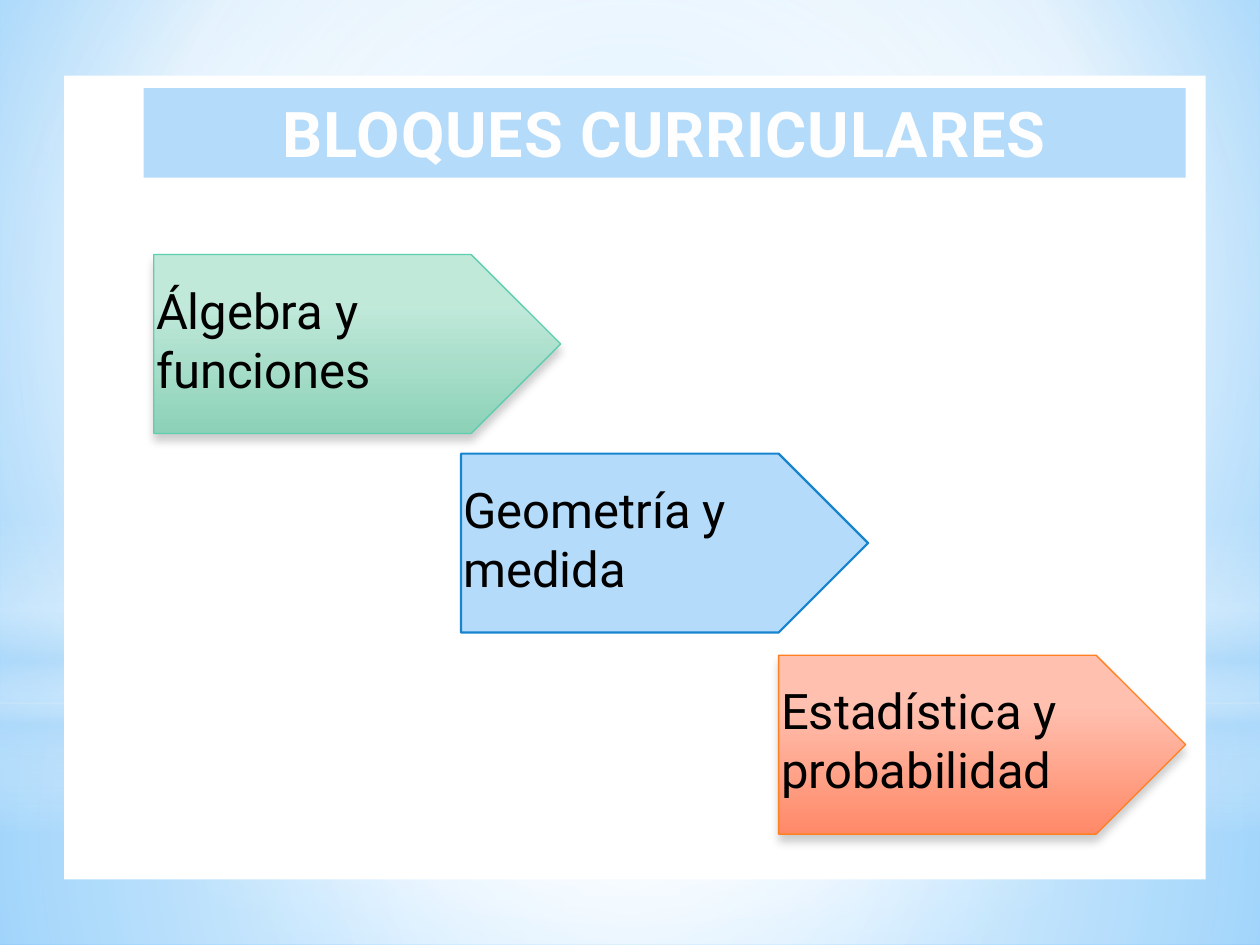
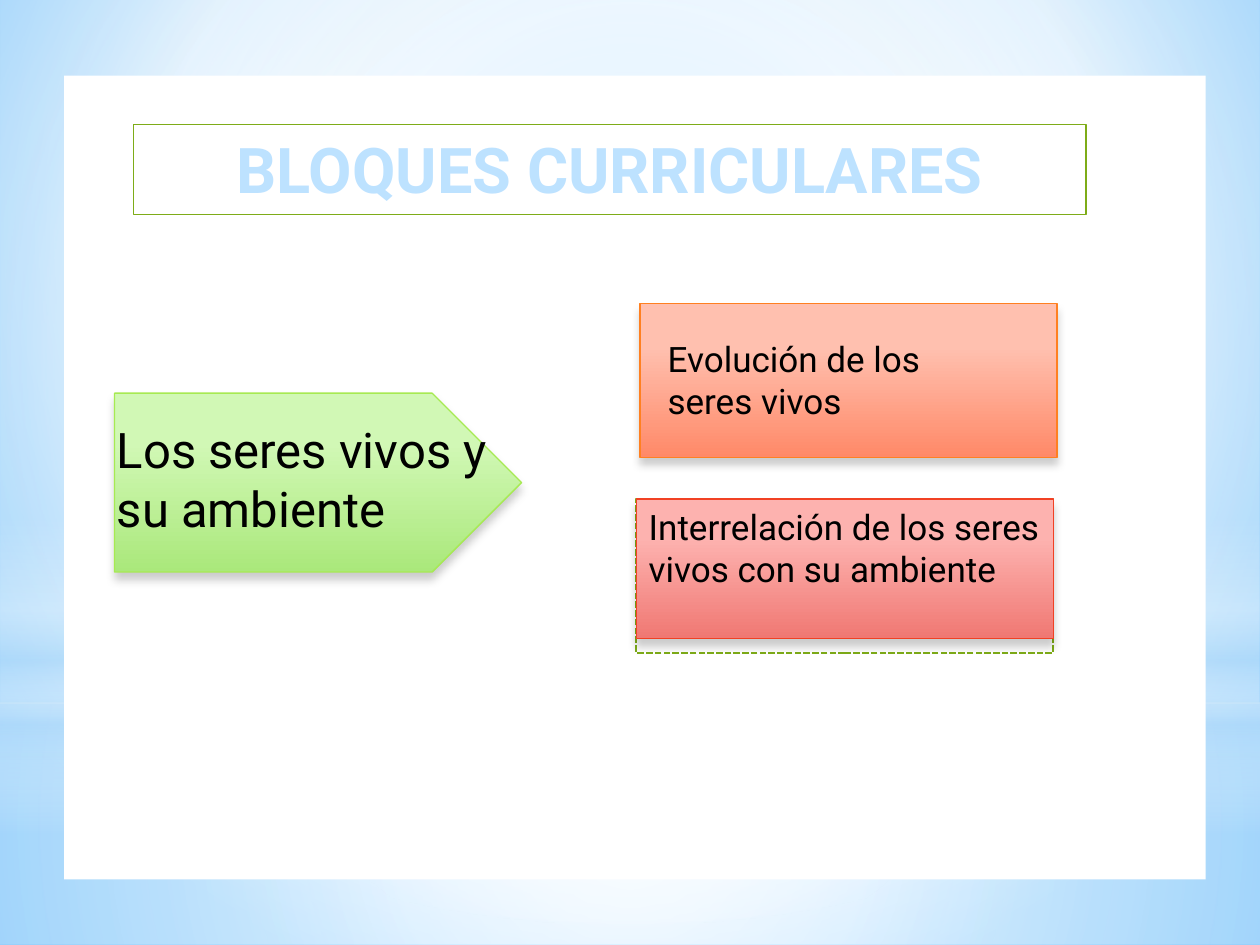
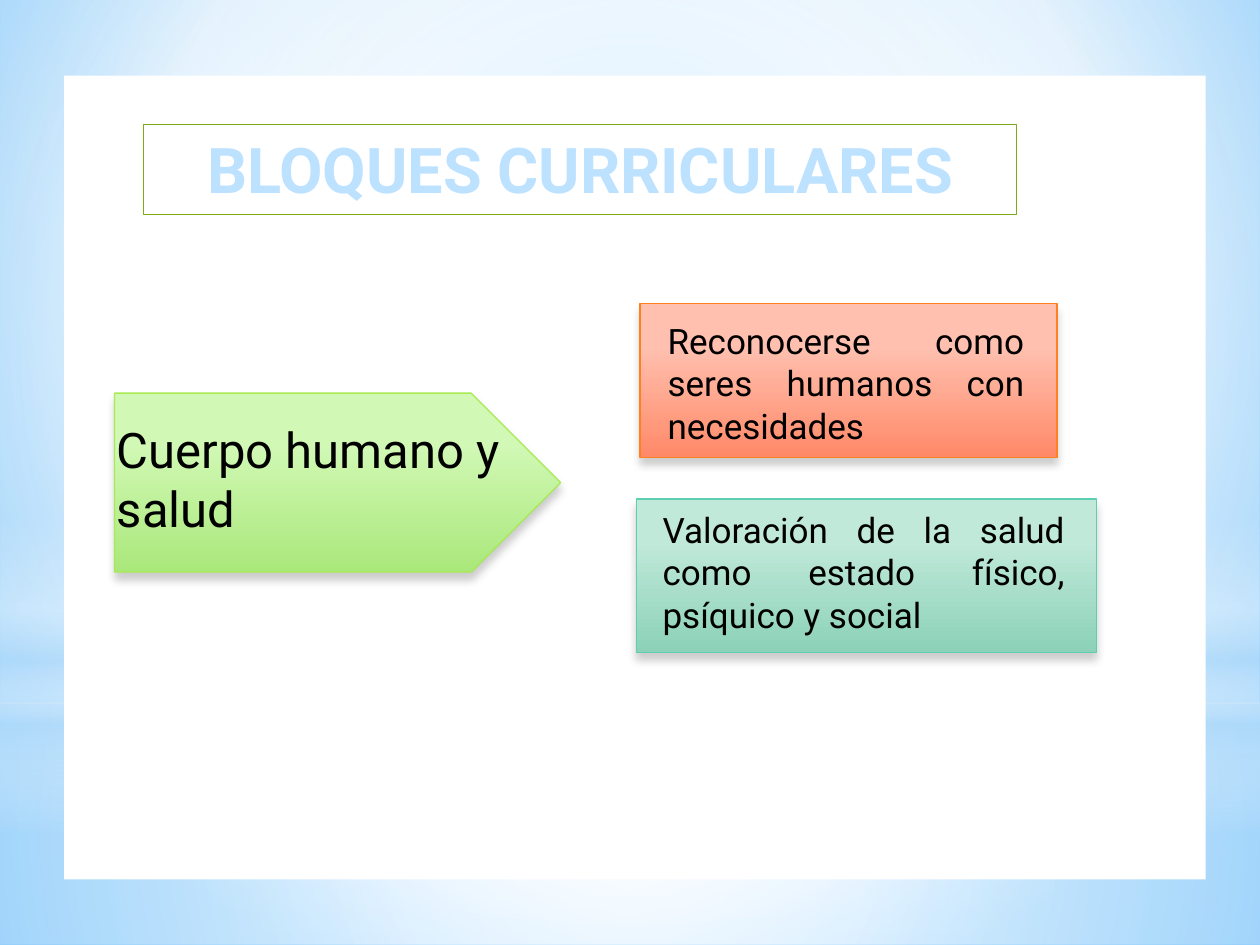
from lxml.etree import SubElement
from pptx import Presentation
from pptx.dml.color import RGBColor
from pptx.enum.dml import MSO_LINE
from pptx.enum.shapes import MSO_SHAPE
from pptx.enum.text import MSO_ANCHOR, MSO_AUTO_SIZE, PP_ALIGN
from pptx.oxml import parse_xml
from pptx.oxml.ns import nsdecls, qn
from pptx.util import Inches, Pt

FONT = "Roboto"
WHITE, SKY, BLACK = "FFFFFF", "B4DCFA", "000000"
OLIVE = "7EAC18"
CENTRE = (50, 50, 50, 50)

# Block styles: gradient stops (position, colour, opacity) and outline
MINT = ([(28, "C0E9DA", 100), (100, "8CD1B8", 100)], "5DCEAF")
CORAL = ([(28, "FFC0AF", 100), (100, "FF8968", 100)], "FF8021")
LIME = ([(28, "D1F8B5", 100), (100, "AAE87B", 100)], "A7EA52")
ROSE = ([(28, "FDB2AF", 100), (100, "F07873", 100)], "F14124")

SHADOW = (
    f'<a:effectLst {nsdecls("a")}><a:outerShdw blurRad="{Pt(5)}" dist="{Pt(4)}" '
    'dir="5400000" rotWithShape="0"><a:srgbClr val="000000"><a:alpha val="20000"/>'
    '</a:srgbClr></a:outerShdw></a:effectLst>'
)


def gradient(stops, centre=None):
    """Gradient fill: circular around centre, or downwards without one."""
    stop_xml = "".join(
        f'<a:gs pos="{position * 1000}"><a:srgbClr val="{colour}">'
        f'<a:alpha val="{opacity * 1000}"/></a:srgbClr></a:gs>'
        for position, colour, opacity in stops)
    if centre:
        left, top, right, bottom = (edge * 1000 for edge in centre)
        direction = (f'<a:path path="circle"><a:fillToRect l="{left}" t="{top}" '
                     f'r="{right}" b="{bottom}"/></a:path>')
    else:
        direction = '<a:lin ang="5400000" scaled="0"/>'
    return parse_xml(f'<a:gradFill {nsdecls("a")} rotWithShape="1">'
                     f'<a:gsLst>{stop_xml}</a:gsLst>{direction}</a:gradFill>')


def block(slide, at, kind=None, fill=None, centre=None, line=None, width=0.75,
          shadow=False, text=(), size=20, colour=BLACK, align=PP_ALIGN.LEFT):
    """Shape of the given kind, or a text box; text is one string a paragraph."""
    at = [Inches(length) for length in at]
    if kind is None:
        shape = slide.shapes.add_textbox(*at)
    else:
        shape = slide.shapes.add_shape(kind, *at)
        shape.shadow.inherit = False
        if isinstance(fill, str):
            shape.fill.solid()
            shape.fill.fore_color.rgb = RGBColor.from_string(fill)
        else:
            shape.fill.background()
        if line:
            shape.line.color.rgb = RGBColor.from_string(line)
            shape.line.width = Pt(width)
        else:
            shape.line.fill.background()
        properties = shape._element.spPr
        if isinstance(fill, list):
            properties.replace(properties.find(qn("a:noFill")), gradient(fill, centre))
        if shadow:
            properties.replace(properties.find(qn("a:effectLst")), parse_xml(SHADOW))

    frame = shape.text_frame
    frame.word_wrap = True
    frame.vertical_anchor = MSO_ANCHOR.TOP
    if text:
        frame.auto_size = MSO_AUTO_SIZE.SHAPE_TO_FIT_TEXT
    for index, words in enumerate(text):
        paragraph = frame.add_paragraph() if index else frame.paragraphs[0]
        paragraph.alignment = align
        run = paragraph.add_run()
        run.text = words
        run.font.name = FONT
        run.font.size = Pt(size)
        run.font.color.rgb = RGBColor.from_string(colour)
    return shape


prs = Presentation()
prs.slide_width, prs.slide_height = Inches(10), Inches(7.5)
algebra, living, body = slides = [
    prs.slides.add_slide(prs.slide_layouts[6]) for _ in range(3)]

# Shared background
master = prs.slide_master
master.background.fill.solid()
background = master._element.find(".//" + qn("p:bgPr"))
background.replace(background[0], gradient(
    [(0, "9ED5FF", 100), (60, WHITE, 100), (100, "5BB9FF", 100)], (20, 10, 20, 60)))

# Shared glow layers and white panel, moved to the master
RECT, ARROW = MSO_SHAPE.RECTANGLE, MSO_SHAPE.PENTAGON
layers = [
    (RECT, (0, 5.58, 10, 1.92), [(0, WHITE, 91), (37, WHITE, 76), (100, SKY, 79)], CENTRE),
    (RECT, (0, 0, 10, 5.58), [(0, WHITE, 89), (48, WHITE, 62), (100, SKY, 79)], CENTRE),
    (RECT, (0, 4.12, 10, 2.5), [(0, WHITE, 0), (29, WHITE, 30), (45, SKY, 40),
                                (55, WHITE, 26), (65, SKY, 60), (100, WHITE, 0)], None),
    (MSO_SHAPE.OVAL, (0, 1.75, 10, 5.58), [(0, WHITE, 100), (56, WHITE, 0)], CENTRE),
    (RECT, (0.51, 0.6, 9.06, 6.38), WHITE, None),
]
for order, (kind, at, fill, centre) in enumerate(layers):
    layer = block(algebra, at, kind, fill, centre)._element
    layer.nvSpPr.cNvPr.set("id", str(100 + order))
    master.shapes._spTree.insert(2 + order, layer)

# Titles
titles = [
    ((1.14, 0.7, 8.27, 0.71), SKY, None, "FFFEFE", "E73214"),
    ((1.06, 0.99, 7.56, 0.71), None, OLIVE, "BDE2FF", "17204F"),
    ((1.14, 0.99, 6.93, 0.71), None, OLIVE, "BDE2FF", "17204F"),
]
for slide, (at, fill, line, colour, outline) in zip(slides, titles):
    title = block(slide, at, RECT, fill, line=line, text=["BLOQUES CURRICULARES"],
                  size=36, colour=colour, align=PP_ALIGN.CENTER)
    run = title.text_frame.paragraphs[0].runs[0]
    run.font.bold = True
    letters = run.font._element
    edge = parse_xml(f'<a:ln {nsdecls("a")} w="{Pt(1)}"/>')
    SubElement(SubElement(edge, qn("a:solidFill")), qn("a:srgbClr"), val=outline)
    letters.insert(0, edge)
    if slide is algebra:
        letters.set("spc", "50")
        letters.find(qn("a:solidFill")).addnext(parse_xml(SHADOW))

# Slide 1: staircase of three curricular blocks
steps = [
    (1.22, 2.02, MINT, ["Álgebra y", "funciones"]),
    (3.66, 3.6, (SKY, "1884CE"), ["Geometría y medida"]),
    (6.18, 5.2, CORAL, ["Estadística y probabilidad"]),
]
for left, top, (fill, line), text in steps:
    plain = fill == SKY
    block(algebra, (left, top, 3.23, 1.42), ARROW, fill, line=line,
          width=1.25 if plain else 0.75, shadow=not plain)
    block(algebra, (left - 0.08, top + 0.155, 3.31, 1.04), text=text, size=28)

# Slides 2 and 3: theme arrow on the left, first topic on the right
themes = [
    (living, 3.23, ["Los seres vivos y", "su ambiente"],
     (5.2, 2.63, 2.87, 0.77), "Evolución de los seres vivos", PP_ALIGN.LEFT),
    (body, 3.54, ["Cuerpo humano y salud"],
     (5.2, 2.49, 3.03, 1.11), "Reconocerse como seres humanos con necesidades",
     PP_ALIGN.JUSTIFY),
]
for slide, length, theme, topic_at, topic, align in themes:
    block(slide, (0.91, 3.12, length, 1.42), ARROW, LIME[0], line=LIME[1], shadow=True)
    block(slide, (0.83, 3.28, 3.31, 1.04), text=theme, size=28)
    block(slide, (5.08, 2.41, 3.31, 1.22), RECT, CORAL[0], line=CORAL[1], shadow=True)
    block(slide, topic_at, text=[topic], align=align)

# Slide 2: second topic over a dashed frame
frame = block(living, (5.05, 3.96, 3.31, 1.22), RECT, line=OLIVE, width=1.25)
frame.line.dash_style = MSO_LINE.SQUARE_DOT
block(living, (5.05, 3.96, 3.31, 1.11), RECT, ROSE[0], line=ROSE[1], shadow=True,
      text=["Interrelación de los seres vivos con su ambiente"])

# Slide 3: second topic
block(body, (5.05, 3.96, 3.65, 1.22), RECT, MINT[0], line=MINT[1], shadow=True)
block(body, (5.16, 3.99, 3.39, 1.11), align=PP_ALIGN.JUSTIFY,
      text=["Valoración de la salud como estado físico, psíquico y social"])

prs.save("out.pptx")
